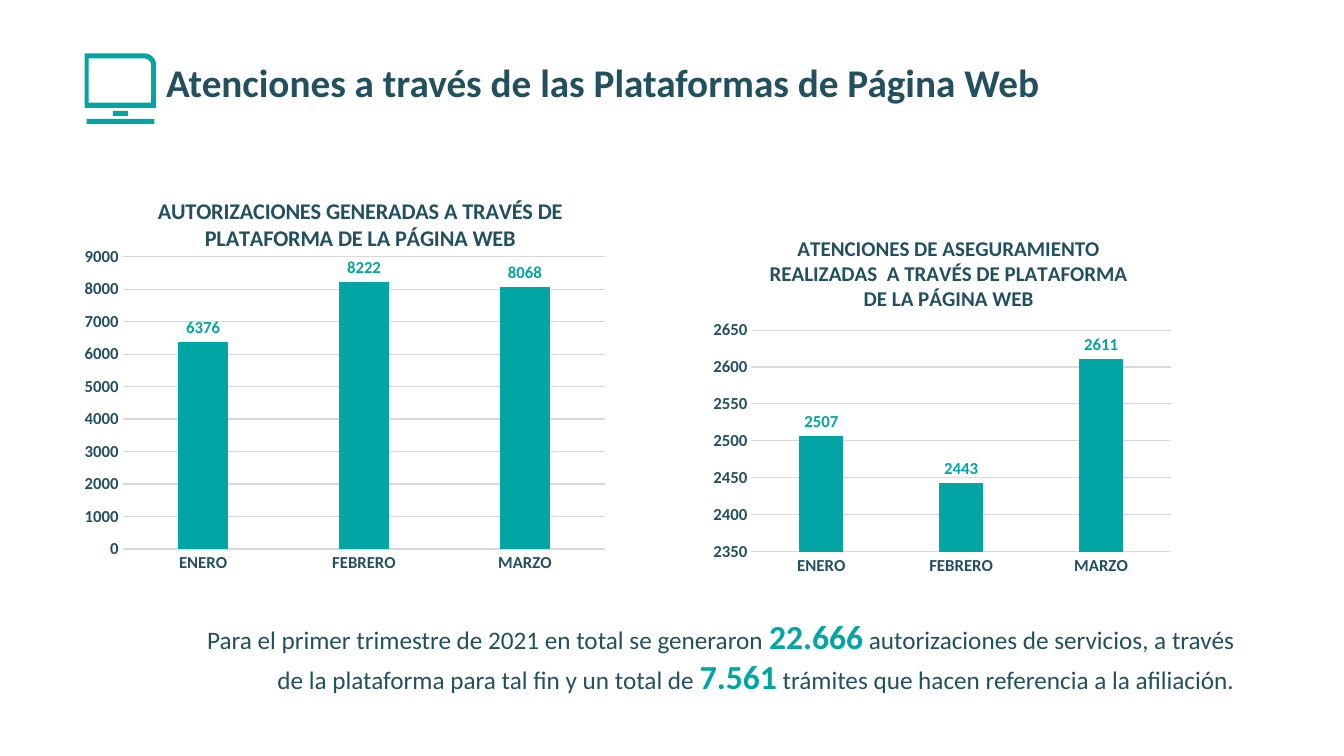
from math import cos, pi, sin

from lxml.etree import SubElement
from pptx import Presentation
from pptx.chart.data import CategoryChartData
from pptx.dml.color import RGBColor
from pptx.enum.chart import XL_CHART_TYPE as ChartType, XL_LABEL_POSITION as LabelPosition
from pptx.enum.chart import XL_TICK_MARK as TickMark
from pptx.enum.text import PP_ALIGN as Align
from pptx.oxml.ns import qn
from pptx.util import Inches, Pt


def color(value):
    return RGBColor.from_string(value)


class SlideBuilder:
    FONT = "Calibri"
    INK = "23505E"
    ACCENT = "00A5A4"
    GRID = "D9D9D9"

    def __init__(self, slide):
        self.shapes = slide.shapes

    def style(self, font, size, ink, bold=False):
        font.name = self.FONT
        font.size = Pt(size)
        font.bold = bold
        font.color.rgb = color(ink)

    def text_box(self, bounds, align):
        frame = self.shapes.add_textbox(*map(Inches, bounds)).text_frame
        frame.word_wrap = True
        paragraph = frame.paragraphs[0]
        paragraph.alignment = align
        return paragraph

    def heading(self, bounds, wording):
        paragraph = self.text_box(bounds, Align.LEFT)
        paragraph.text = wording
        self.style(paragraph.font, 28, self.INK, True)

    def summary(self, bounds, parts):
        paragraph = self.text_box(bounds, Align.RIGHT)
        for wording, is_figure in parts:
            run = paragraph.add_run()
            run.text = wording
            if is_figure:
                self.style(run.font, 24, self.ACCENT, True)
            else:
                self.style(run.font, 18, self.INK)

    def icon(self, outlines):
        first, *others = [[(Inches(x), Inches(y)) for x, y in outline] for outline in outlines]
        builder = self.shapes.build_freeform(*first[0])
        builder.add_line_segments(first[1:])
        for outline in others:
            builder.move_to(*outline[0])
            builder.add_line_segments(outline[1:])
        icon = builder.convert_to_shape()
        icon.shadow.inherit = False
        icon.fill.solid()
        icon.fill.fore_color.rgb = color(self.ACCENT)
        icon.line.fill.background()

    def layout(self, parent, position, **values):
        old = parent.find(qn("c:layout"))
        if old is not None:
            parent.remove(old)
        layout = SubElement(parent, qn("c:layout"))
        manual = SubElement(layout, qn("c:manualLayout"))
        for name, value in values.items():
            SubElement(manual, qn(f"c:{name}")).set("val", str(value))
        parent.insert(position, layout)

    def column_chart(self, bounds, title, title_size, title_at, plot, scale, values):
        data = CategoryChartData(number_format="General")
        data.categories = ["ENERO", "FEBRERO", "MARZO"]
        data.add_series("Series 1", values)
        chart = self.shapes.add_chart(
            ChartType.COLUMN_CLUSTERED, *map(Inches, bounds), data
        ).chart
        self.style(chart.font, 10, "000000")
        chart.has_legend = False
        chart.has_title = True
        heading = chart.chart_title.text_frame.paragraphs[0]
        heading.text = title
        self.style(heading.font, title_size, self.INK, True)
        chart.chart_title.include_in_layout = False
        title_x, title_y = title_at
        self.layout(chart.chart_title._element, 1,
                    xMode="edge", yMode="edge", x=title_x, y=title_y)

        columns = chart.plots[0]
        x, y, width, height = plot
        self.layout(columns._element.getparent(), 0, layoutTarget="inner",
                    xMode="edge", yMode="edge", x=x, y=y, w=width, h=height)
        columns.gap_width = 219
        columns.overlap = -27
        columns.vary_by_categories = False
        series = columns.series[0]
        series.format.fill.solid()
        series.format.fill.fore_color.rgb = color(self.ACCENT)
        labels = series.data_labels
        labels.show_value = True
        labels.position = LabelPosition.OUTSIDE_END
        self.style(labels.font, 12, self.ACCENT, True)

        months, amounts = chart.category_axis, chart.value_axis
        for axis in (months, amounts):
            axis.major_tick_mark = axis.minor_tick_mark = TickMark.NONE
            self.style(axis.tick_labels.font, 12, self.INK, True)
        amounts.minimum_scale, amounts.maximum_scale, amounts.major_unit = scale
        amounts.format.line.fill.background()
        for line in (months.format.line, amounts.major_gridlines.format.line):
            line.color.rgb = color(self.GRID)
            line.width = Pt(0.75)


def rectangle(left, top, right, bottom):
    return [(left, top), (right, top), (right, bottom), (left, bottom), (left, top)]


def screen(left, top, right, bottom, radius):
    angles = [step * pi / 16 for step in range(9)]
    corner = [(right - radius + radius * sin(a), top + radius - radius * cos(a))
              for a in angles]
    return [(left, top), *corner, (right, bottom), (left, bottom), (left, top)]


def main():
    deck = Presentation()
    deck.slide_width, deck.slide_height = Inches(13.33), Inches(7.5)
    page = SlideBuilder(deck.slides.add_slide(deck.slide_layouts[6]))

    page.heading((1.55, 0.53, 9.17, 0.57),
                 "Atenciones a través de las Plataformas de Página Web")
    page.column_chart(
        (0.84, 1.7, 5.17, 4.03),
        "AUTORIZACIONES GENERADAS A TRAVÉS DE PLATAFORMA DE LA PÁGINA WEB",
        16, (0.13, 0.05), (0.07, 0.21, 0.93, 0.72),
        (0, 9000, 1000), (6376, 8222, 8068))
    page.column_chart(
        (6.98, 2.1, 4.73, 3.67),
        "ATENCIONES DE ASEGURAMIENTO REALIZADAS  A TRAVÉS DE PLATAFORMA DE LA PÁGINA WEB",
        15, (0.13, 0.05), (0.1, 0.32, 0.88, 0.6),
        (2350, 2650, 50), (2507, 2443, 2611))
    page.summary((1.86, 6.06, 10.48, 0.91), [
        ("Para el primer trimestre de 2021 en total se generaron ", False),
        ("22.666", True),
        (" autorizaciones de servicios, a través de la plataforma "
         "para tal fin y un total de ", False),
        ("7.561", True),
        (" trámites que hacen referencia a la afiliación.", False),
    ])
    page.icon([
        screen(0.84, 0.53, 1.55, 1.07, 0.12),
        screen(0.88, 0.58, 1.5, 1.02, 0.07),
        rectangle(0.86, 1.18, 1.53, 1.23),
        rectangle(1.12, 1.1, 1.27, 1.15),
    ])
    deck.save("out.pptx")


if __name__ == "__main__":
    main()
